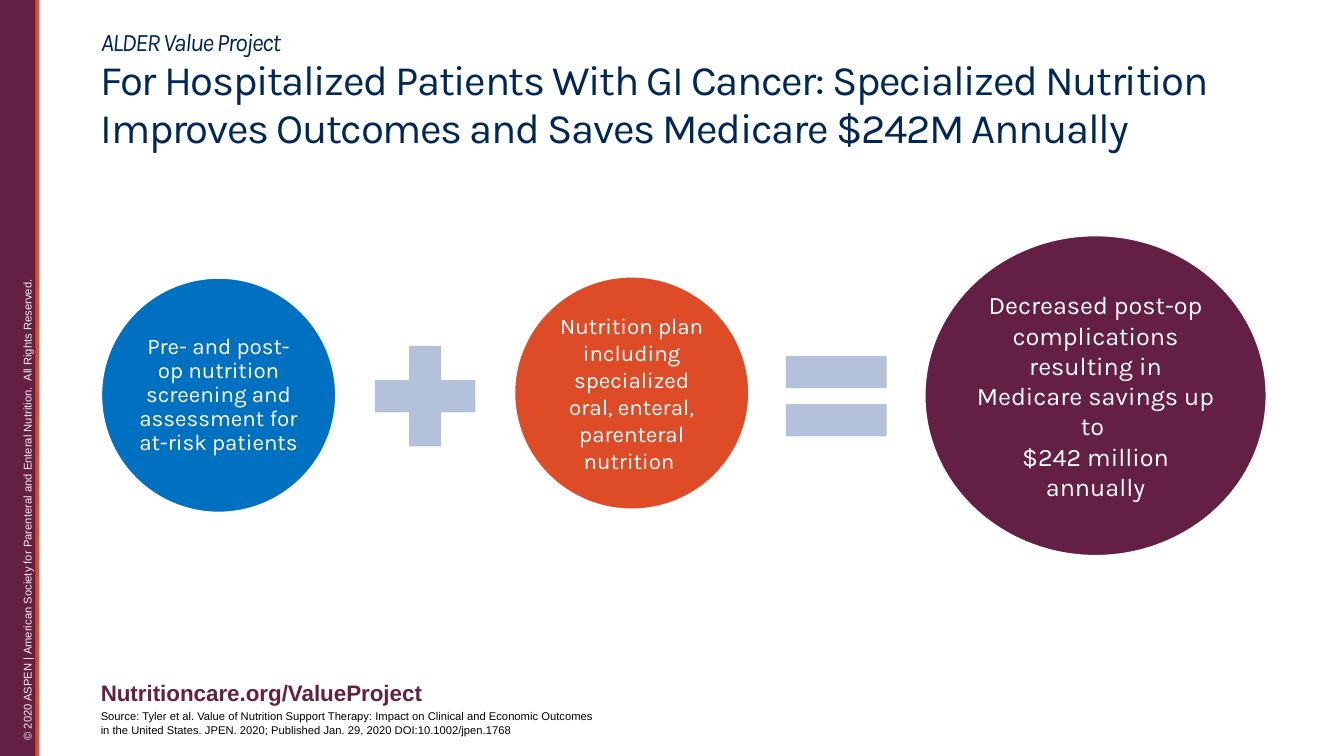
from copy import deepcopy
from dataclasses import dataclass

from pptx import Presentation
from pptx.dml.color import RGBColor
from pptx.enum.shapes import MSO_SHAPE
from pptx.enum.text import MSO_ANCHOR, MSO_AUTO_SIZE, PP_ALIGN
from pptx.util import Cm, Pt

NAVY, PLUM, ORANGE = "002857", "641F45", "DE4C27"
BLUE, PALE, WHITE = "0070C0", "B3C1DB", "FFFFFF"


@dataclass
class Figure:
    """A filled shape, in centimetres, with optional text and outline."""
    kind: MSO_SHAPE
    left: float
    top: float
    width: float
    height: float
    fill: str
    text: str = ""
    size: float = 16
    spacing: float = 1.0
    line: str | None = None


@dataclass
class Label:
    """A text box, in centimetres, with its format."""
    text: str
    left: float
    top: float
    width: float
    height: float
    size: float
    color: str
    bold: bool = False
    rotation: float = 0
    inset: float = 0


FIGURES = [
    Figure(MSO_SHAPE.RECTANGLE, 0, 0, 0.99, 19.05, PLUM),
    Figure(MSO_SHAPE.RECTANGLE, 0.89, 0, 0.1, 19.05, ORANGE),
    Figure(MSO_SHAPE.OVAL, 2.54, 6.99, 5.94, 5.94, BLUE,
           "Pre- and post-op nutrition screening and assessment for at-risk patients",
           spacing=0.9, line=WHITE),
    Figure(MSO_SHAPE.MATH_PLUS, 8.99, 8.26, 3.45, 3.45, PALE),
    Figure(MSO_SHAPE.OVAL, 12.95, 6.96, 5.94, 5.89, ORANGE,
           "Nutrition plan including specialized oral, enteral, parenteral nutrition ",
           line=WHITE),
    Figure(MSO_SHAPE.MATH_EQUAL, 19.35, 8.26, 3.45, 3.45, PALE),
    Figure(MSO_SHAPE.OVAL, 23.29, 5.92, 8.64, 8.1, PLUM,
           "Decreased post-op complications resulting in Medicare savings up to \n"
           "$242 million annually", size=18, line=WHITE),
]

LABELS = [
    Label("© 2020 ASPEN | American Society for Parenteral and Enteral Nutrition.  "
          "All Rights Reserved.", -7.42, 10.49, 16.23, 0.61, 8, "F2F2F2",
          rotation=270, inset=0.25),
    Label("Nutritioncare.org/ValueProject", 2.54, 17.12, 11.3, 0.69, 16, PLUM, bold=True),
    Label("Source: Tyler et al. Value of Nutrition Support Therapy: Impact on Clinical and "
          "Economic Outcomes in the United States. JPEN. 2020; Published Jan. 29, 2020 "
          "DOI:10.1002/jpen.1768", 2.54, 17.88, 12.45, 0.69, 8, "000000"),
]


def rgb(value: str) -> RGBColor:
    """Turn a hex string into a colour."""
    return RGBColor.from_string(value)


def add_text(p, text: str, *, size: float, color: str, font: str = "Karla",
             bold: bool = False, italic: bool = False, tracking: int = 0) -> None:
    """Add formatted text to a paragraph, breaking lines at newlines."""
    parts = text.split("\n")
    for i, part in enumerate(parts):
        r = p.add_run()
        r.text = part
        r.font.size, r.font.name = Pt(size), font
        r.font.bold, r.font.italic = bold, italic
        r.font.color.rgb = rgb(color)
        if tracking:
            r.font._element.set("spc", str(tracking))
        if i < len(parts) - 1:
            p.add_line_break()
            p._p[-1].append(deepcopy(r.font._element))


def set_frame(tf, inset: float, anchor: MSO_ANCHOR) -> None:
    """Set wrapping, margins in centimetres and anchor of a text frame."""
    tf.word_wrap, tf.auto_size = True, MSO_AUTO_SIZE.NONE
    tf.vertical_anchor = anchor
    tf.margin_left = tf.margin_right = Cm(inset)
    tf.margin_top = tf.margin_bottom = Cm(inset / 2 if inset > 0.1 else inset)


def add_figure(s, fig: Figure) -> None:
    """Draw one filled shape."""
    sp = s.shapes.add_shape(fig.kind, Cm(fig.left), Cm(fig.top), Cm(fig.width), Cm(fig.height))
    sp.shadow.inherit = False
    sp.fill.solid()
    sp.fill.fore_color.rgb = rgb(fig.fill)
    if fig.line:
        sp.line.color.rgb, sp.line.width = rgb(fig.line), Pt(2)
    else:
        sp.line.fill.background()
    if fig.text:
        set_frame(sp.text_frame, 0.06, MSO_ANCHOR.MIDDLE)
        p = sp.text_frame.paragraphs[0]
        p.alignment, p.line_spacing = PP_ALIGN.CENTER, fig.spacing
        add_text(p, fig.text, size=fig.size, color=WHITE)


def add_label(s, label: Label) -> None:
    """Draw one text box."""
    sp = s.shapes.add_textbox(Cm(label.left), Cm(label.top), Cm(label.width), Cm(label.height))
    sp.rotation = label.rotation
    set_frame(sp.text_frame, label.inset, MSO_ANCHOR.TOP)
    add_text(sp.text_frame.paragraphs[0], label.text, size=label.size,
             color=label.color, font="Arial", bold=label.bold)


def set_title(s) -> None:
    """Place and fill the title placeholder."""
    sp = s.shapes.title
    sp.left, sp.top, sp.width, sp.height = Cm(2.54), Cm(0.33), Cm(28.78), Cm(3.91)
    set_frame(sp.text_frame, 0, MSO_ANCHOR.MIDDLE)
    p = sp.text_frame.paragraphs[0]
    p.alignment, p.line_spacing = PP_ALIGN.LEFT, 0.95
    add_text(p, "ALDER Value Project\n", size=18, color=NAVY, italic=True, tracking=-100)
    add_text(p, "For Hospitalized Patients With GI Cancer: Specialized Nutrition Improves "
             "Outcomes and Saves Medicare $242M Annually", size=30, color=NAVY, tracking=-100)


def main() -> None:
    """Build and save the slide."""
    prs = Presentation()
    prs.slide_width, prs.slide_height = Cm(33.87), Cm(19.05)
    s = prs.slides.add_slide(prs.slide_layouts[5])
    set_title(s)
    for fig in FIGURES:
        add_figure(s, fig)
    for label in LABELS:
        add_label(s, label)
    prs.save("out.pptx")


if __name__ == "__main__":
    main()
